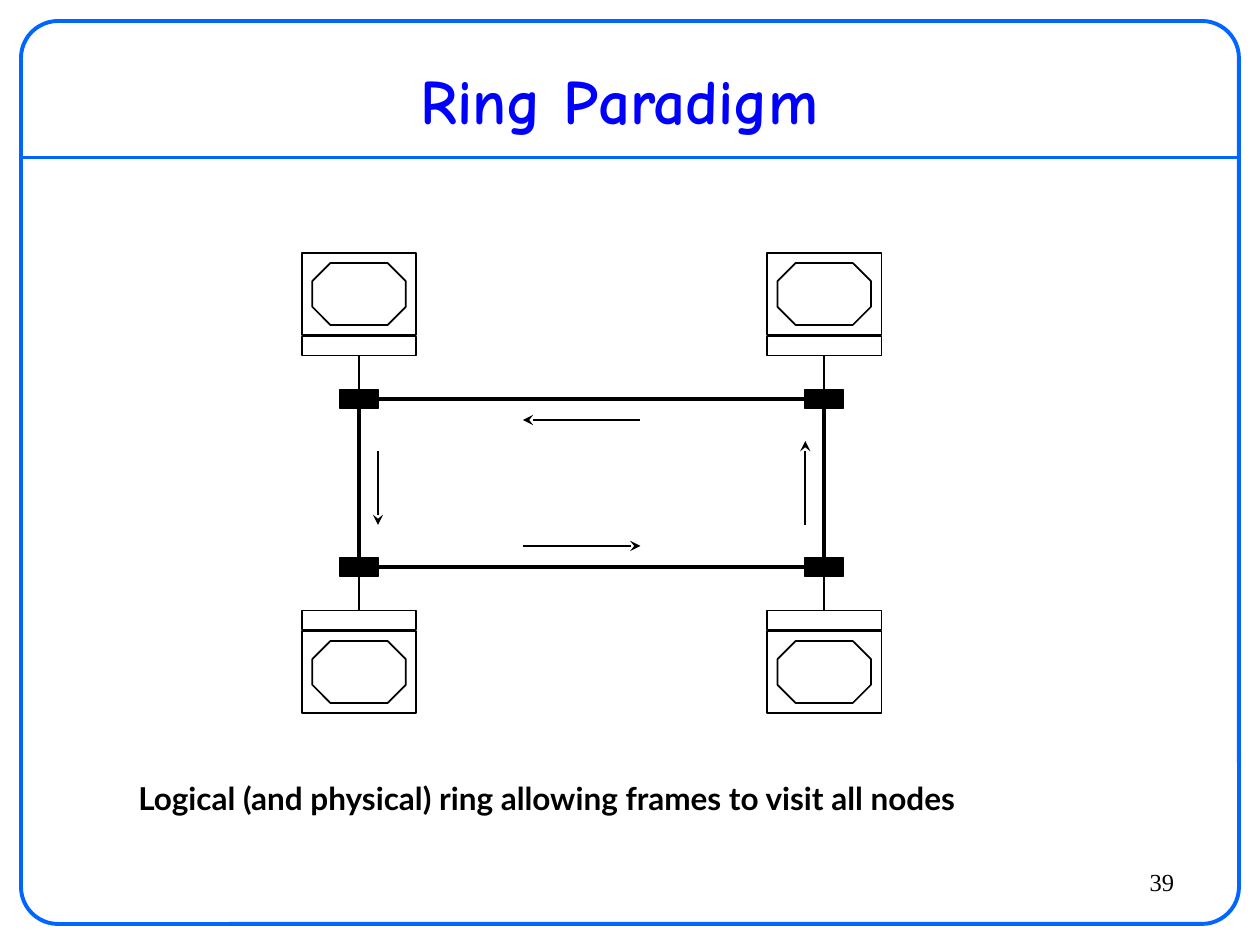
"""Build a slide showing four stations joined in a one-way ring."""
from lxml import etree
from pptx import Presentation
from pptx.dml.color import RGBColor
from pptx.enum.shapes import MSO_CONNECTOR, MSO_SHAPE
from pptx.enum.text import MSO_ANCHOR, PP_ALIGN
from pptx.oxml.ns import qn
from pptx.util import Inches, Pt

STRAIGHT = MSO_CONNECTOR.STRAIGHT
RECTANGLE, OCTAGON, ROUNDED = MSO_SHAPE.RECTANGLE, MSO_SHAPE.OCTAGON, MSO_SHAPE.ROUNDED_RECTANGLE
LEFT, CENTER, RIGHT = PP_ALIGN.LEFT, PP_ALIGN.CENTER, PP_ALIGN.RIGHT
MIDDLE, ANCHOR_TOP = MSO_ANCHOR.MIDDLE, MSO_ANCHOR.TOP
SIDE_TOP, SIDE_LEFT, SIDE_BOTTOM, SIDE_RIGHT = range(4)
THEME = {
    "frame": RGBColor(0x00, 0x66, 0xFF),
    "title": ("Comic Neue", 36, True, RGBColor(0x00, 0x00, 0xFF)),
    "caption": ("Lato", 18, True, RGBColor(0, 0, 0)),
    "number": ("Times New Roman", 14, False, RGBColor(0, 0, 0)),
    "ink": RGBColor(0, 0, 0),
    "thin": Pt(1), "ring": Pt(2), "border": Pt(2.25),
}

presentation = Presentation()
presentation.slide_width, presentation.slide_height = Inches(10), Inches(7.5)
slide = presentation.slides.add_slide(presentation.slide_layouts[5])
column = presentation.slide_width / 120
row = presentation.slide_height / 90


def add_line(shapes, start, end, color, width):
    """Add a straight line between two grid points."""
    line = shapes.add_connector(STRAIGHT, int(start[0] * column), int(start[1] * row),
                                int(end[0] * column), int(end[1] * row))
    line.line.color.rgb, line.line.width = color, width
    etree.SubElement(line._element.spPr, qn("a:effectLst"))
    return line


def add_box(shapes, kind, center, size, color, width, filled=False):
    """Add an outlined shape centred on a grid point."""
    shape = shapes.add_shape(kind, int((center[0] - size[0] / 2) * column),
                             int((center[1] - size[1] / 2) * row),
                             int(size[0] * column), int(size[1] * row))
    shape.shadow.inherit = False
    shape.line.color.rgb, shape.line.width = color, width
    if filled:
        shape.fill.solid()
        shape.fill.fore_color.rgb = color
    else:
        shape.fill.background()
    return shape


add_line(slide.shapes, (2, 15), (118, 15), THEME["frame"], THEME["border"])
frame = add_box(slide.shapes, ROUNDED, (60, 45), (116, 86), THEME["frame"], THEME["border"])
frame.adjustments[0] = 0.041

texts = [
    ("title", "Ring Paradigm", (4, 5, 110, 9), CENTER, MIDDLE, 1),
    ("number", "39", (101, 82, 12, 5), RIGHT, ANCHOR_TOP, 1),
    ("caption", "Logical (and physical) ring allowing frames to visit all nodes",
     (12, 74, 96, 4.4), LEFT, ANCHOR_TOP, 0.9),
]
for role, text, (left, top, width, height), alignment, anchor, spacing in texts:
    shape = slide.shapes.title if role == "title" else slide.shapes.add_textbox(0, 0, 0, 0)
    shape.left, shape.top = int(left * column), int(top * row)
    shape.width, shape.height = int(width * column), int(height * row)
    shape.text_frame.text = text
    shape.text_frame.word_wrap = True
    shape.text_frame.vertical_anchor = anchor
    paragraph = shape.text_frame.paragraphs[0]
    paragraph.alignment, paragraph.line_spacing = alignment, spacing
    name, size, bold, color = THEME[role]
    paragraph.font.name, paragraph.font.size, paragraph.font.bold = name, Pt(size), bold
    paragraph.font.color.rgb = color

ink, thin = THEME["ink"], THEME["thin"]
station_columns = (34.2, 78.5)
middle_row = 46
hubs = {}
for direction in (-1, 1):
    for side, x in enumerate(station_columns):
        station = slide.shapes.add_group_shape().shapes
        base_y, screen_y, hub_y = (middle_row + direction * offset for offset in (13.05, 18, 8))
        base = add_box(station, RECTANGLE, (x, base_y), (10.9, 1.8), ink, thin)
        add_box(station, RECTANGLE, (x, screen_y), (10.9, 7.8), ink, thin)
        screen = add_box(station, OCTAGON, (x, screen_y), (8.9, 5.9), ink, thin)
        screen.adjustments[0] = 0.293
        hub = add_box(station, RECTANGLE, (x, hub_y), (3.6, 1.8), ink, thin, filled=True)
        stub = add_line(station, (x, base_y), (x, hub_y), ink, thin)
        stub.begin_connect(base, SIDE_BOTTOM if direction < 0 else SIDE_TOP)
        stub.end_connect(hub, SIDE_TOP if direction < 0 else SIDE_BOTTOM)
        hubs[direction, side] = hub

ring = [
    ((-1, 0), SIDE_BOTTOM, (1, 0), SIDE_TOP),
    ((1, 0), SIDE_RIGHT, (1, 1), SIDE_LEFT),
    ((-1, 1), SIDE_BOTTOM, (1, 1), SIDE_TOP),
    ((-1, 0), SIDE_RIGHT, (-1, 1), SIDE_LEFT),
]
for first, first_side, second, second_side in ring:
    link = add_line(slide.shapes, (0, 0), (0, 0), ink, THEME["ring"])
    link.begin_connect(hubs[first], first_side)
    link.end_connect(hubs[second], second_side)

arrows = [((61, 40), (49.8, 40)), ((49.8, 52), (61, 52)),
          ((36, 43), (36, 50)), ((76.7, 50), (76.7, 42))]
for start, end in arrows:
    arrow = add_line(slide.shapes, start, end, ink, thin)
    etree.SubElement(arrow.line._get_or_add_ln(), qn("a:tailEnd"), type="stealth")

presentation.save("out.pptx")
